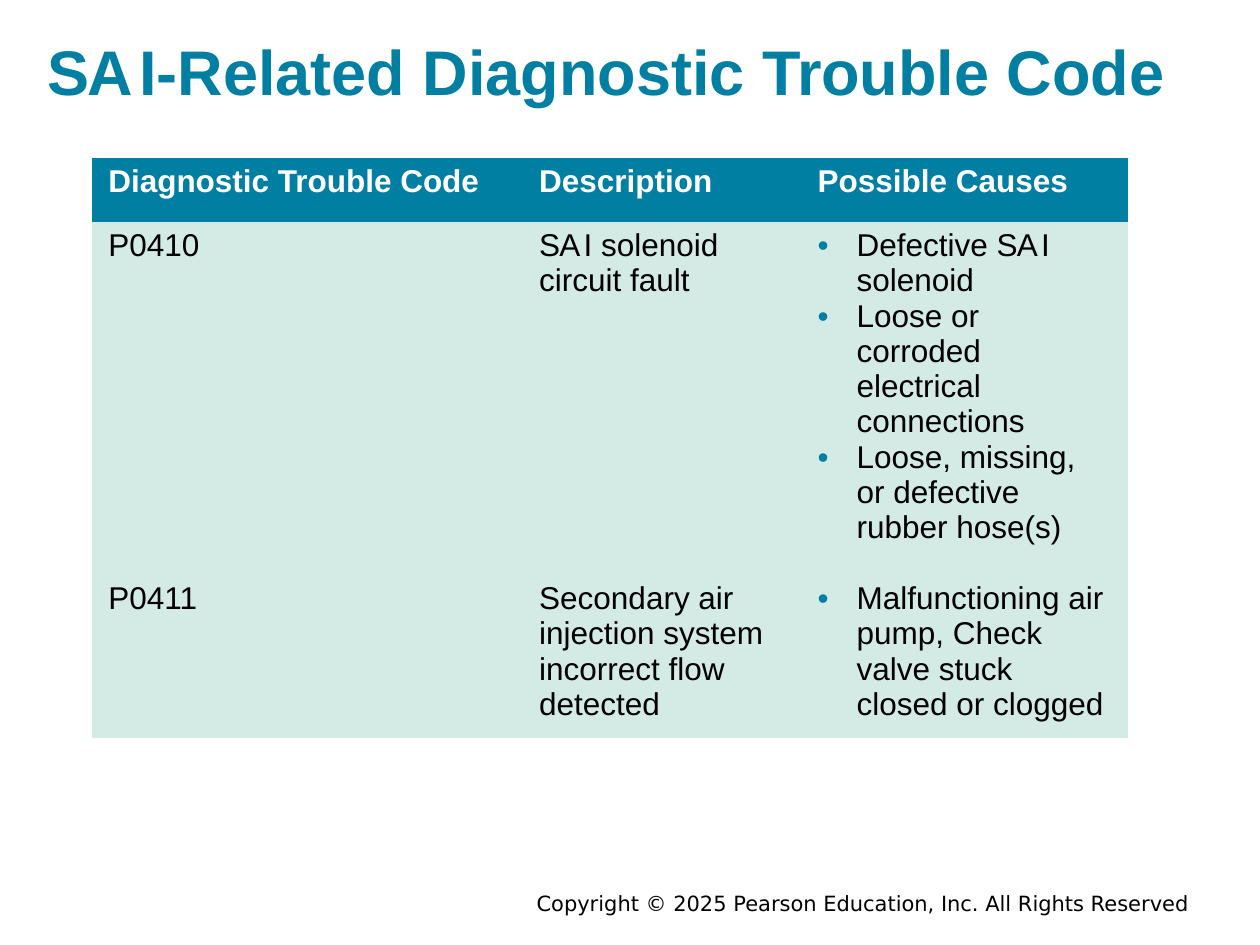
from dataclasses import dataclass

from lxml.etree import SubElement
from pptx import Presentation
from pptx.dml.color import RGBColor
from pptx.enum.text import MSO_ANCHOR, MSO_AUTO_SIZE, PP_ALIGN
from pptx.oxml.ns import qn
from pptx.util import Inches, Pt


@dataclass(frozen=True)
class Theme:
    teal: str = "007FA3"
    mint: str = "D4EAE4"
    white: str = "FFFFFF"
    black: str = "000000"
    font: str = "Arial"
    footer_font: str = "DejaVu Sans"
    title_size: int = 36
    table_size: int = 18
    footer_size: int = 12


@dataclass(frozen=True)
class TroubleCode:
    code: str
    description: list[str]
    causes: list[str]


THEME = Theme()
ABBREVIATION = "S A "  # letters of SAI, drawn together by tight spacing
NO_STYLE = "{2D5ABB26-0587-4C30-8999-92F81FD0307C}"
HEADINGS = ["Diagnostic Trouble Code", "Description", "Possible Causes"]
COLUMN_WIDTHS = [3.42, 2.21, 2.59]
ROW_HEIGHTS = [0.51, 0.97, 0.97]
TROUBLE_CODES = [
    TroubleCode(
        "P0410",
        ["S A I solenoid circuit fault"],
        ["Defective S A I solenoid",
         "Loose or corroded electrical connections",
         "Loose, missing, or defective rubber hose(s)"],
    ),
    TroubleCode(
        "P0411",
        ["Secondary air", "injection system", "incorrect flow", "detected"],
        ["Malfunctioning air pump, Check valve stuck closed or clogged"],
    ),
]


def add_bullet(paragraph) -> None:
    properties = paragraph._p.get_or_add_pPr()
    properties.set("marL", str(Inches(0.31)))
    properties.set("indent", str(-Inches(0.31)))
    color = SubElement(properties, qn("a:buClr"))
    SubElement(color, qn("a:srgbClr"), val=THEME.teal)
    SubElement(properties, qn("a:buFont"), typeface=THEME.font)
    SubElement(properties, qn("a:buChar"), char="•")


def write(frame, lines: list[str], *, size: int = THEME.table_size,
          color: str = THEME.black, font: str = THEME.font, bold: bool = False,
          align=PP_ALIGN.LEFT, bullet: bool = False, tight: float = -2.2) -> None:
    """Write one paragraph per line, tightening the abbreviation by `tight` points."""
    for index, line in enumerate(lines):
        paragraph = frame.add_paragraph() if index else frame.paragraphs[0]
        paragraph.alignment = align
        if bullet:
            add_bullet(paragraph)
        for part in filter(None, line.partition(ABBREVIATION)):
            run = paragraph.add_run()
            run.text = part
            run.font.size = Pt(size)
            run.font.name = font
            run.font.bold = bold
            run.font.color.rgb = RGBColor.from_string(color)
            if part == ABBREVIATION:
                run.font._element.set("spc", str(round(tight * 100)))


def fit_line(frame) -> None:
    """Format a text frame that holds a single line of the page."""
    frame.word_wrap = True
    frame.auto_size = MSO_AUTO_SIZE.SHAPE_TO_FIT_TEXT
    frame.vertical_anchor = MSO_ANCHOR.MIDDLE
    frame.margin_left = frame.margin_right = 0
    frame.margin_top = frame.margin_bottom = Inches(0.02)


def fill_cell(cell, lines: list[str], fill: str, **text_format) -> None:
    cell.fill.solid()
    cell.fill.fore_color.rgb = RGBColor.from_string(fill)
    cell.margin_left = cell.margin_right = Inches(0.13)
    cell.margin_top = cell.margin_bottom = Inches(0.05)
    write(cell.text_frame, lines, **text_format)


def add_code_table(slide) -> None:
    frame = slide.shapes.add_table(
        len(ROW_HEIGHTS), len(COLUMN_WIDTHS),
        Inches(0.73), Inches(1.25), Inches(8.22), Inches(4.63))
    table = frame.table
    table.horz_banding = False
    table._tbl.tblPr.find(qn("a:tableStyleId")).text = NO_STYLE
    for column, width in zip(table.columns, COLUMN_WIDTHS):
        column.width = Inches(width)
    for row, height in zip(table.rows, ROW_HEIGHTS):
        row.height = Inches(height)
    frame.height = Inches(4.63)

    for column, heading in enumerate(HEADINGS):
        fill_cell(table.cell(0, column), [heading], THEME.teal,
                  color=THEME.white, bold=True)
    for row, trouble in enumerate(TROUBLE_CODES, start=1):
        fill_cell(table.cell(row, 0), [trouble.code], THEME.mint)
        fill_cell(table.cell(row, 1), trouble.description, THEME.mint)
        fill_cell(table.cell(row, 2), trouble.causes, THEME.mint, bullet=True)


def main() -> None:
    presentation = Presentation()
    presentation.slide_width, presentation.slide_height = Inches(10), Inches(7.5)
    slide = presentation.slides.add_slide(presentation.slide_layouts[5])

    # Copyright line
    copyright_line = slide.shapes.add_textbox(
        Inches(3.07), Inches(7.05), Inches(6.37), Inches(0.24))
    fit_line(copyright_line.text_frame)
    write(copyright_line.text_frame,
          ["Copyright © 2025 Pearson Education, Inc. All Rights Reserved"],
          size=THEME.footer_size, font=THEME.footer_font, align=PP_ALIGN.RIGHT)

    # Title
    title = slide.shapes.title
    title.left, title.top = Inches(0.38), Inches(0.23)
    title.width, title.height = Inches(9.15), Inches(0.65)
    fit_line(title.text_frame)
    write(title.text_frame, ["S A I-Related Diagnostic Trouble Code"],
          size=THEME.title_size, color=THEME.teal, bold=True, tight=-5)

    # Trouble codes
    add_code_table(slide)

    presentation.save("out.pptx")


if __name__ == "__main__":
    main()
